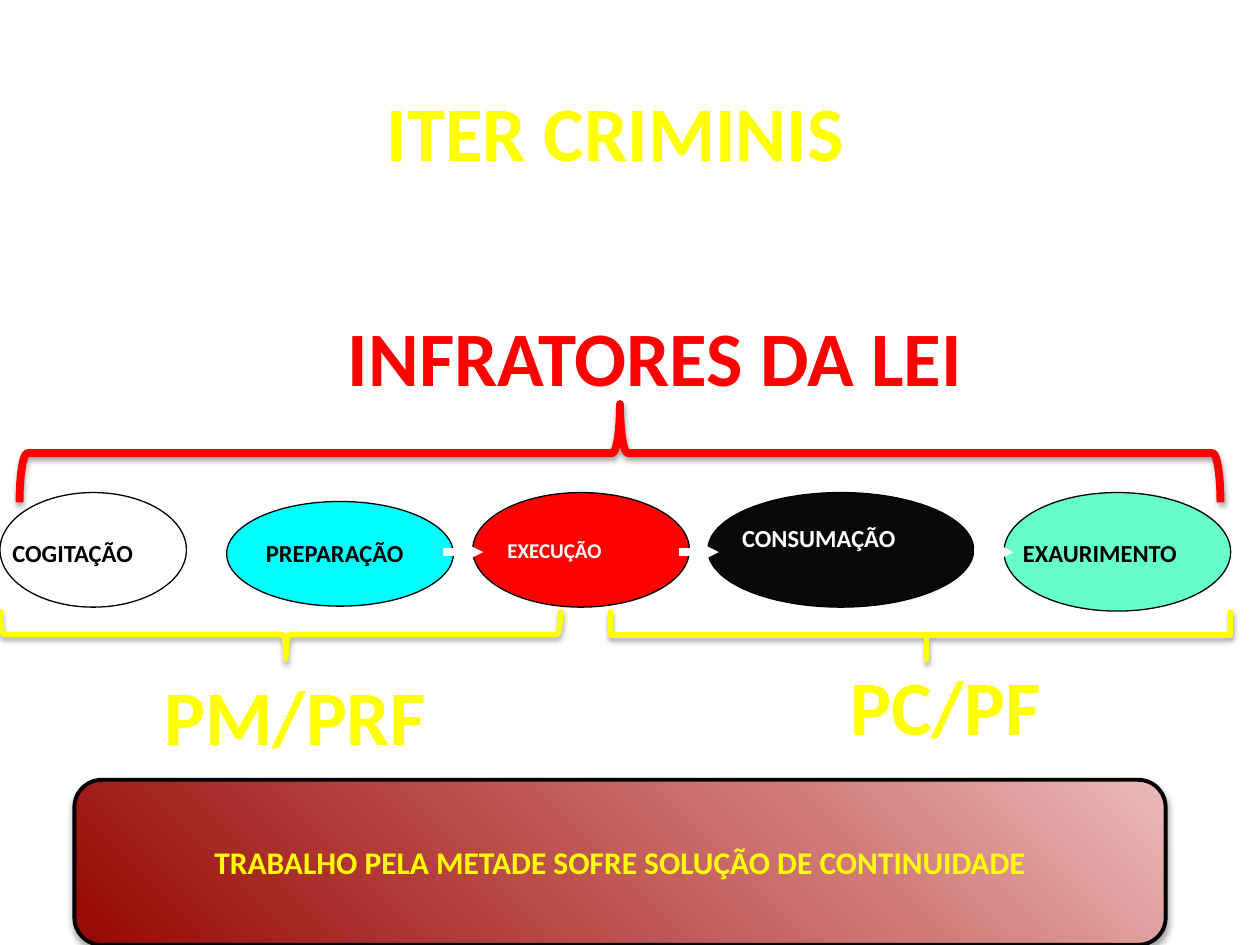
"""Build the iter criminis slide: five stages, their braces and a closing bar."""
from lxml.etree import SubElement
from pptx import Presentation
from pptx.dml.color import RGBColor
from pptx.enum.shapes import MSO_CONNECTOR, MSO_SHAPE
from pptx.enum.text import MSO_ANCHOR, PP_ALIGN
from pptx.oxml.ns import qn
from pptx.util import Cm, Pt

COLORS = {
    "white": "FFFFFF", "black": "000000", "ink": "080808", "red": "FF0000",
    "yellow": "FFFF00", "cyan": "00FFFF", "mint": "66FFCC",
    "dark": "960703", "rose": "D07977", "pale": "EBBABA",
}


def add_outline(kind, box, line, width, fill=None, shadow=False):
    sp = s.shapes.add_shape(kind, *map(Cm, box))
    sp.shadow.inherit = False
    sp.line.color.rgb = RGBColor.from_string(COLORS[line])
    sp.line.width = Pt(width)
    if fill:
        sp.fill.solid()
        sp.fill.fore_color.rgb = RGBColor.from_string(COLORS[fill])
    else:
        sp.fill.background()
    if shadow:
        effects = sp.element.spPr.find(qn("a:effectLst"))
        outer = SubElement(effects, qn("a:outerShdw"), blurRad=str(Pt(3.1)),
                           dist=str(Pt(1.8)), dir="5400000", rotWithShape="0")
        color = SubElement(outer, qn("a:srgbClr"), val=COLORS["black"])
        SubElement(color, qn("a:alpha"), val="35000")
    return sp


def write(sp, text, size, color, align):
    tf = sp.text_frame
    tf.word_wrap = True
    p = tf.paragraphs[0]
    p.alignment = align
    r = p.add_run()
    r.text = text
    r.font.name = "Calibri"
    r.font.size = Pt(size)
    r.font.bold = True
    r.font.color.rgb = RGBColor.from_string(COLORS[color])


prs = Presentation()
prs.slide_width, prs.slide_height = Cm(25.4), Cm(19.05)
s = prs.slides.add_slide(prs.slide_layouts[6])

stages = [
    ("COGITAÇÃO", (0, 9.93, 3.76, 2.31), "white", (0, 10.72, 3.96), 14, "black"),
    ("PREPARAÇÃO", (4.57, 10.11, 4.57, 2.11), "cyan", (5.11, 10.72, 4.24), 14, "black"),
    ("EXECUÇÃO", (9.53, 9.93, 4.37, 2.31), "red", (9.98, 10.72, 3.61), 12, "white"),
    ("CONSUMAÇÃO", (14.27, 9.93, 5.36, 2.31), "ink", (14.71, 10.41, 4.8), 14, "white"),
    ("EXAURIMENTO", (20.24, 9.93, 4.57, 2.39), "mint", (20.37, 10.72, 4.62), 14, "black"),
]
for text, oval, fill, label, size, color in stages:
    add_outline(MSO_SHAPE.OVAL, oval, "black", 0.75, fill)
    sp = s.shapes.add_textbox(*map(Cm, (*label, 0.86)))
    write(sp, text, size, color, PP_ALIGN.LEFT)

for x in (3.76, 8.94, 13.69, 19.63):
    arrow = s.shapes.add_connector(
        MSO_CONNECTOR.STRAIGHT, Cm(x), Cm(11.13), Cm(x + 0.8), Cm(11.13))
    arrow.line.color.rgb = RGBColor.from_string(COLORS["white"])
    arrow.line.width = Pt(4.5)
    spPr = arrow.element.spPr
    SubElement(spPr.find(qn("a:ln")), qn("a:tailEnd"), type="triangle")
    SubElement(spPr, qn("a:effectLst"))

headings = [
    ("ITER CRIMINIS", (5.36, 1.57, 14.1, 2.9), "yellow"),
    ("INFRATORES DA LEI", (3.71, 6.12, 19, 3.33), "red"),
    ("PM/PRF", (0.99, 13.36, 9.93, 2.9), "yellow"),
    ("PC/PF", (14.1, 13.16, 9.93, 2.9), "yellow"),
]
for text, box, color in headings:
    sp = s.shapes.add_textbox(*map(Cm, box))
    write(sp, text, 44, color, PP_ALIGN.CENTER)

braces = [
    (MSO_SHAPE.RIGHT_BRACE, (11.51, -2.97, 1.98, 24.21), "red", 4.5, (0.08, 0.5)),
    (MSO_SHAPE.LEFT_BRACE, (5.16, 7.14, 0.99, 11.3), "yellow", 3, (0.08, 0.51)),
    (MSO_SHAPE.LEFT_BRACE, (18.06, 6.55, 0.99, 12.5), "yellow", 3, (0, 0.51)),
]
for kind, box, color, width, adjustments in braces:
    sp = add_outline(kind, box, color, width, shadow=True)
    sp.rotation = 270
    for i, value in enumerate(adjustments):
        sp.adjustments[i] = value

bar = add_outline(MSO_SHAPE.ROUNDED_RECTANGLE, (1.5, 15.72, 22, 3.33),
                  "black", 2.25, shadow=True)
no_fill = bar.element.spPr.find(qn("a:noFill"))
grad = bar.element.spPr.makeelement(qn("a:gradFill"), {"rotWithShape": "1"})
no_fill.getparent().replace(no_fill, grad)
stops = SubElement(grad, qn("a:gsLst"))
for pos, color in ((0, "dark"), (68, "rose"), (100, "pale")):
    stop = SubElement(stops, qn("a:gs"), pos=str(pos * 1000))
    SubElement(stop, qn("a:srgbClr"), val=COLORS[color])
radial = SubElement(grad, qn("a:path"), {"path": "circle"})
SubElement(radial, qn("a:fillToRect"), t="100000", r="100000")
bar.text_frame.vertical_anchor = MSO_ANCHOR.MIDDLE
write(bar, "TRABALHO PELA METADE SOFRE SOLUÇÃO DE CONTINUIDADE", 18, "yellow",
      PP_ALIGN.CENTER)

prs.save("out.pptx")
